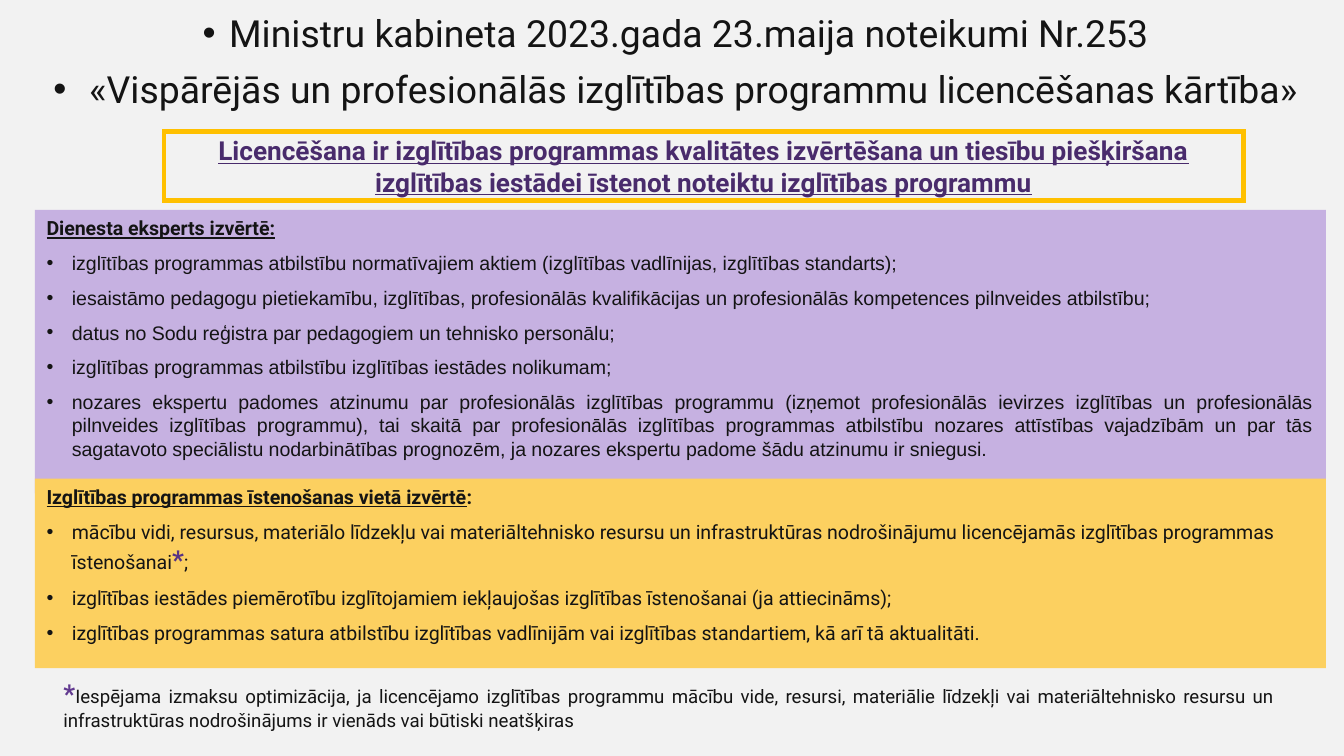
"""Build a slide on the licensing rules for education programmes."""
from lxml import etree
from pptx import Presentation
from pptx import util as u
from pptx.dml.color import RGBColor
from pptx.enum import shapes, text
from pptx.oxml.ns import qn

INK = RGBColor(0x14, 0x14, 0x14)
PLUM = RGBColor(0x49, 0x2B, 0x6C)
VIOLET = RGBColor(0x58, 0x33, 0x84)
NOTE_VIOLET = RGBColor(0x62, 0x3A, 0x90)
LILAC = RGBColor(0xC6, 0xB1, 0xE1)
YELLOW = RGBColor(0xFC, 0xD0, 0x60)
GOLD = RGBColor(0xFF, 0xC0, 0x00)
PAPER = RGBColor(0xF2, 0xF2, 0xF2)

LEFT, CENTER, JUSTIFY = text.PP_ALIGN.LEFT, text.PP_ALIGN.CENTER, text.PP_ALIGN.JUSTIFY
WIDE_INSETS, SLIM_INSETS = (0.22, 0.12), (0.18, 0.09)
HEAD = {"bold": True, "underline": True}

TITLES = [
    "Ministru kabineta 2023.gada 23.maija noteikumi Nr.253",
    " «Vispārējās un profesionālās izglītības programmu licencēšanas kārtība»",
]
DEFINITION = (
    "Licencēšana ir izglītības programmas kvalitātes izvērtēšana un tiesību piešķiršana "
    "izglītības iestādei īstenot noteiktu izglītības programmu"
)
PANELS = [
    {
        "frame": (0.66, 3.97, 24.4, 5.36), "fill": LILAC, "font": "Arial", "align": JUSTIFY,
        "heading": [("Dienesta eksperts izvērtē:", HEAD)],
        "items": [
            [("izglītības programmas atbilstību normatīvajiem aktiem (izglītības vadlīnijas, "
              "izglītības standarts);", {})],
            [("iesaistāmo pedagogu pietiekamību, izglītības, profesionālās kvalifikācijas un "
              "profesionālās kompetences pilnveides atbilstību;", {})],
            [("datus no Sodu reģistra par pedagogiem un tehnisko personālu;", {})],
            [("izglītības programmas atbilstību izglītības iestādes nolikumam;", {})],
            [("nozares ekspertu padomes atzinumu par profesionālās izglītības programmu "
              "(izņemot profesionālās ievirzes izglītības un profesionālās pilnveides "
              "izglītības programmu), tai skaitā par profesionālās izglītības programmas "
              "atbilstību nozares attīstības vajadzībām un par tās sagatavoto speciālistu "
              "nodarbinātības prognozēm, ja nozares ekspertu padome šādu atzinumu ir "
              "sniegusi.", {})],
        ],
    },
    {
        "frame": (0.66, 9.05, 24.4, 3.58), "fill": YELLOW, "font": "Roboto", "align": LEFT,
        "heading": [("Izglītības programmas īstenošanas vietā izvērtē", HEAD),
                    (":", {"bold": True})],
        "items": [
            [("mācību vidi, resursus, materiālo līdzekļu vai materiāltehnisko resursu un "
              "infrastruktūras nodrošinājumu licencējamās izglītības programmas īstenošanai", {}),
             ("*", {"size": 14, "color": VIOLET, "bold": True}),
             (";", {})],
            [("izglītības iestādes piemērotību izglītojamiem iekļaujošas izglītības "
              "īstenošanai (ja attiecināms);", {})],
            [("izglītības programmas satura atbilstību izglītības vadlīnijām vai izglītības "
              "standartiem, kā arī tā aktualitāti.", {})],
        ],
    },
]
FOOTNOTE = [
    ("*", {"size": 14, "color": NOTE_VIOLET, "bold": True}),
    ("Iespējama izmaksu optimizācija, ja licencējamo izglītības programmu mācību vide, resursi, "
     "materiālie līdzekļi vai materiāltehnisko resursu un infrastruktūras nodrošinājums ir "
     "vienāds vai būtiski neatšķiras", {"size": 10}),
]


def lengths(frame):
    return [u.Cm(value) for value in frame]


def prepare(box, insets, anchor):
    frame = box.text_frame
    frame.word_wrap = True
    frame.auto_size = text.MSO_AUTO_SIZE.NONE
    frame.vertical_anchor = anchor
    frame.margin_left = frame.margin_right = u.Cm(insets[0])
    frame.margin_top = frame.margin_bottom = u.Cm(insets[1])


def add_rectangle(slide, frame):
    box = slide.shapes.add_shape(shapes.MSO_SHAPE.RECTANGLE, *lengths(frame))
    box.shadow.inherit = False
    return box


def add_bullet(para, indent):
    props = para._p.get_or_add_pPr()
    props.set("marL", str(u.Cm(indent)))
    props.set("indent", str(-u.Cm(indent)))
    color = etree.SubElement(props, qn("a:buClr"))
    etree.SubElement(color, qn("a:srgbClr"), val=str(INK))
    etree.SubElement(props, qn("a:buFont"), typeface="Arial")
    etree.SubElement(props, qn("a:buChar"), char="•")


def write(box, index, spans, align, size=10.5, font="Roboto", before=0, after=0,
          spacing=1.0, indent=None):
    frame = box.text_frame
    para = frame.add_paragraph() if index else frame.paragraphs[0]
    para.alignment = align
    para.line_spacing = spacing
    para.space_before, para.space_after = u.Pt(before), u.Pt(after)
    if indent:
        add_bullet(para, indent)
    for words, style in spans:
        span = para.add_run()
        span.text = words
        span.font.name = font
        span.font.size = u.Pt(style.get("size", size))
        span.font.bold = style.get("bold", False)
        span.font.underline = style.get("underline", False)
        span.font.color.rgb = style.get("color", INK)


def add_titles(slide):
    box = slide.placeholders[1]
    box.left, box.top, box.width, box.height = lengths((0.86, 0.61, 24.05, 1.17))
    prepare(box, WIDE_INSETS, text.MSO_ANCHOR.MIDDLE)
    box.text_frame.margin_left = 0
    for index, title in enumerate(TITLES):
        write(box, index, [(title, {})], CENTER, size=20, before=8.5, spacing=0.9, indent=0.5)


def add_definition(slide):
    box = add_rectangle(slide, (3.1, 2.49, 20.4, 1.3))
    box.fill.background()
    box.line.color.rgb = GOLD
    box.line.width = u.Pt(2.5)
    outline = box.element.spPr.find(qn("a:ln"))
    etree.SubElement(outline, qn("a:miter"), lim="800000")
    prepare(box, SLIM_INSETS, text.MSO_ANCHOR.MIDDLE)
    write(box, 0, [(DEFINITION, {**HEAD, "color": PLUM})], CENTER, size=14, after=5.5)


def add_panel(slide, panel):
    box = add_rectangle(slide, panel["frame"])
    box.fill.solid()
    box.fill.fore_color.rgb = panel["fill"]
    box.line.fill.background()
    prepare(box, WIDE_INSETS, text.MSO_ANCHOR.TOP)
    write(box, 0, panel["heading"], LEFT, after=6)
    last = len(panel["items"])
    for index, spans in enumerate(panel["items"], 1):
        write(box, index, spans, panel["align"], font=panel["font"],
              after=6 if index < last else 0, indent=0.48)


def add_footnote(slide):
    box = slide.shapes.add_textbox(*lengths((1.02, 12.37, 23.22, 1.88)))
    prepare(box, SLIM_INSETS, text.MSO_ANCHOR.MIDDLE)
    write(box, 0, FOOTNOTE, JUSTIFY, after=5.5)


def main():
    deck = Presentation()
    deck.slide_width, deck.slide_height = u.Cm(25.4), u.Cm(14.29)
    page = deck.slides.add_slide(deck.slide_layouts[1])
    page.background.fill.solid()
    page.background.fill.fore_color.rgb = PAPER
    empty_title = page.shapes.title.element
    empty_title.getparent().remove(empty_title)
    add_titles(page)
    add_definition(page)
    for panel in PANELS:
        add_panel(page, panel)
    add_footnote(page)
    deck.save("out.pptx")


if __name__ == "__main__":
    main()
